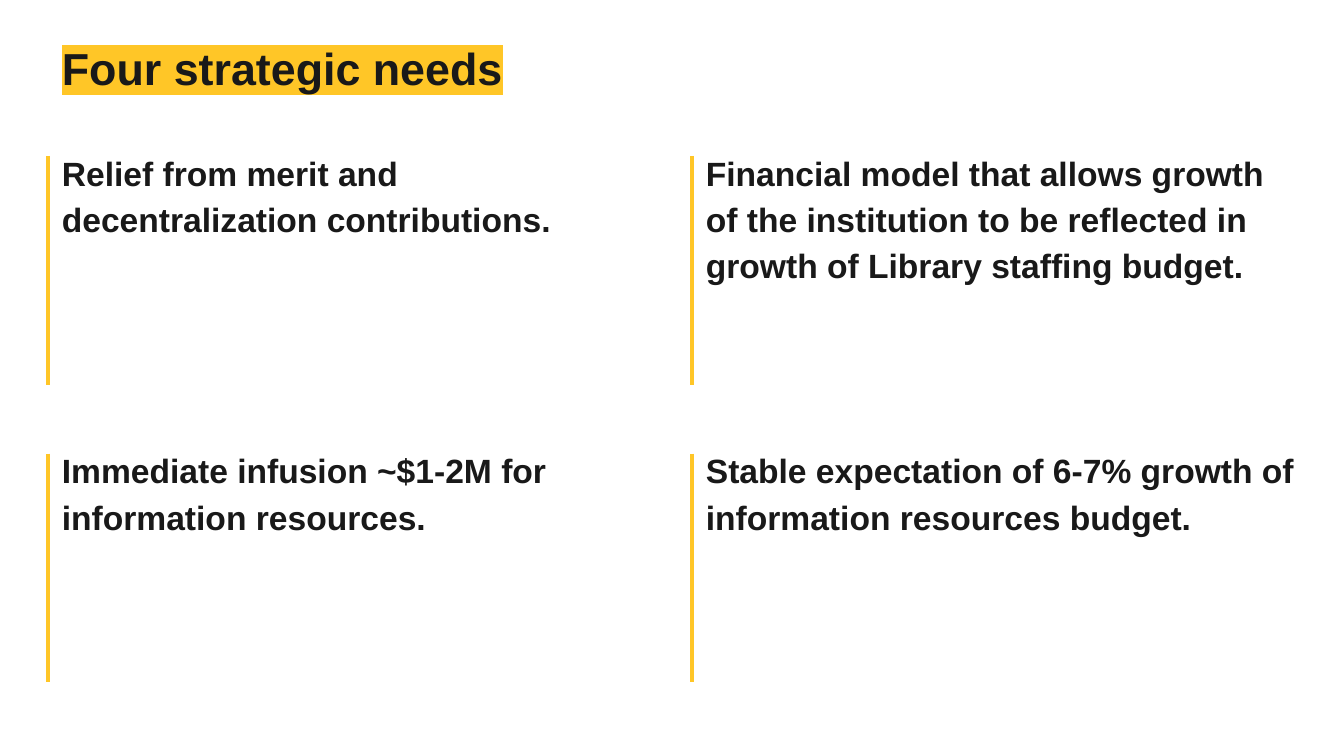
from itertools import product

from lxml.etree import SubElement
from pptx import Presentation
from pptx.dml.color import RGBColor
from pptx.enum.shapes import MSO_CONNECTOR
from pptx.enum.text import MSO_ANCHOR, MSO_AUTO_SIZE, PP_ALIGN
from pptx.oxml.ns import qn
from pptx.util import Cm, Pt

TITLE = "Four strategic needs"
NEEDS = [
    "Relief from merit and decentralization contributions.",
    "Financial model that allows growth of the institution to be reflected in "
    "growth of Library staffing budget.",
    "Immediate infusion ~$1-2M for information resources.",
    "Stable expectation of 6-7% growth of information resources budget.",
]

THEME = {
    "font": "Arial", "ink": "191919", "gold": "FFC627",
    "title_size": 32, "need_size": 24, "bar_width": 3,
}
COLUMNS = [
    {"left": 1.56, "width": 15.21, "inset_left": 0, "inset_right": 0.33},
    {"left": 17.1, "width": 15.52, "inset_left": 0.69, "inset_right": 0},
]
ROW_TOPS = [3.69, 11.19]
ROW_HEIGHT = 6.68
BAR_GAP, BAR_DROP, BAR_HEIGHT = 0.36, 0.24, 5.76


def set_attributes(target, values):
    """Set every named value on the target."""
    for name, value in values.items():
        setattr(target, name, value)


def write_text(shape, text, size, spacing, inset_left=0, inset_right=0):
    """Fill a shape with one bold paragraph and return its run."""
    frame = shape.text_frame
    set_attributes(frame, {
        "word_wrap": True, "auto_size": MSO_AUTO_SIZE.NONE,
        "vertical_anchor": MSO_ANCHOR.TOP,
        "margin_left": Cm(inset_left), "margin_right": Cm(inset_right),
        "margin_top": 0, "margin_bottom": 0,
    })
    paragraph = frame.paragraphs[0]
    set_attributes(paragraph, {"line_spacing": spacing, "alignment": PP_ALIGN.LEFT,
                               "space_before": Pt(0)})
    run = paragraph.add_run()
    run.text = text
    set_attributes(run.font, {"name": THEME["font"], "size": Pt(size), "bold": True})
    run.font.color.rgb = RGBColor.from_string(THEME["ink"])
    return run


def add_title(slide):
    """Place the highlighted title."""
    title = slide.shapes.title
    set_attributes(title, {"left": Cm(1.56), "top": Cm(1.18),
                           "width": Cm(31.17), "height": Cm(1.68)})
    run = write_text(title, TITLE, THEME["title_size"], 0.9)
    properties = run.font._element
    highlight = SubElement(properties, qn("a:highlight"))
    SubElement(highlight, qn("a:srgbClr"), val=THEME["gold"])
    properties.find(qn("a:latin")).addprevious(highlight)


def add_need(slide, text, column, top):
    """Place one need with the gold bar at its left."""
    box = slide.shapes.add_textbox(Cm(column["left"]), Cm(top),
                                   Cm(column["width"]), Cm(ROW_HEIGHT))
    write_text(box, text, THEME["need_size"], 1.15,
               column["inset_left"], column["inset_right"])
    bar_left = Cm(column["left"] + column["inset_left"] - BAR_GAP)
    bar_top = top + BAR_DROP
    bar = slide.shapes.add_connector(MSO_CONNECTOR.STRAIGHT, bar_left, Cm(bar_top),
                                     bar_left, Cm(bar_top + BAR_HEIGHT))
    bar.line.color.rgb = RGBColor.from_string(THEME["gold"])
    bar.line.width = Pt(THEME["bar_width"])
    SubElement(bar._element.spPr, qn("a:effectLst"))


def main():
    """Build and save the slide."""
    presentation = Presentation()
    set_attributes(presentation, {"slide_width": Cm(33.87), "slide_height": Cm(19.05)})
    slide = presentation.slides.add_slide(presentation.slide_layouts[5])
    add_title(slide)
    for text, (top, column) in zip(NEEDS, product(ROW_TOPS, COLUMNS)):
        add_need(slide, text, column, top)
    presentation.save("out.pptx")


if __name__ == "__main__":
    main()
